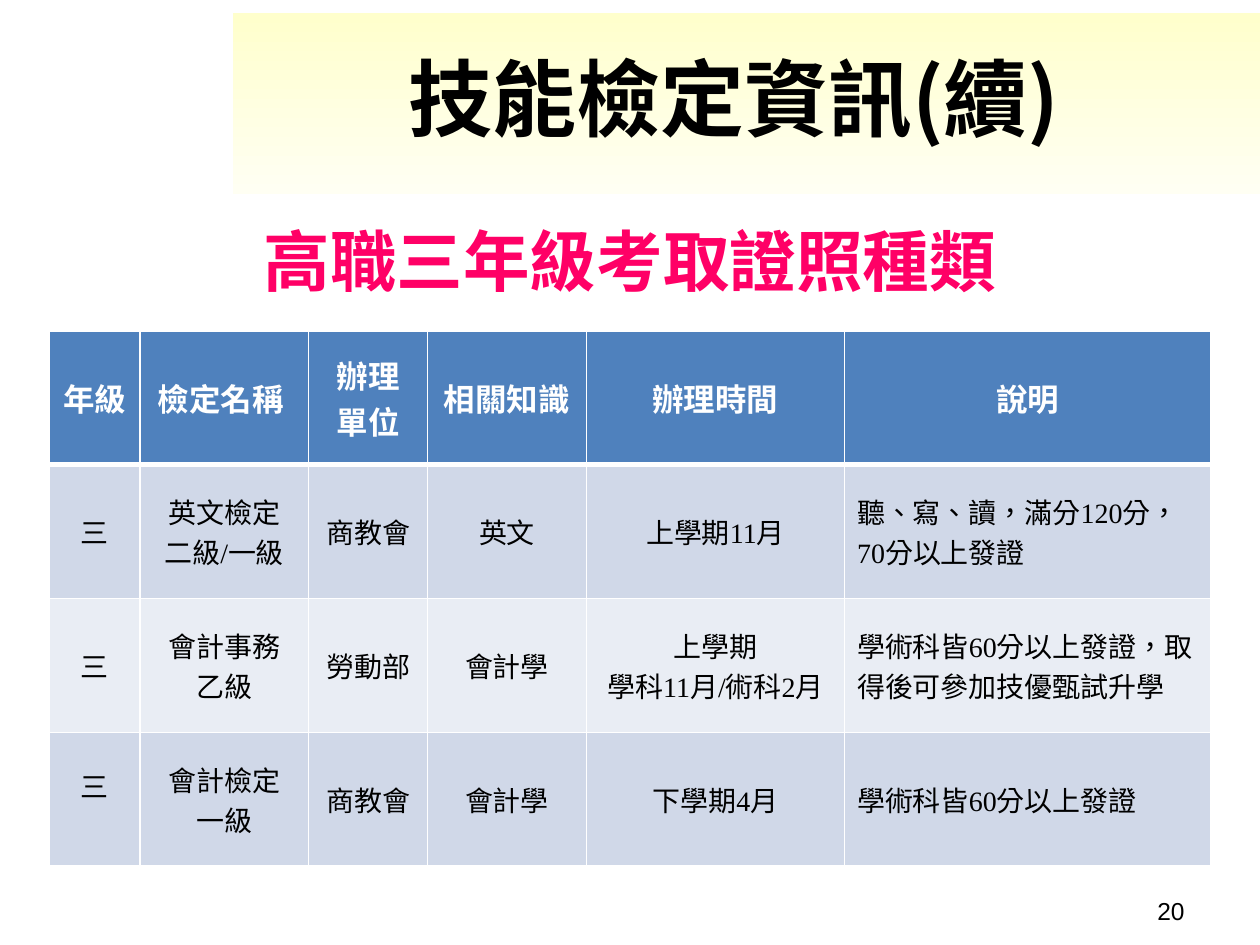
"""Build the slide listing third-year vocational certificates."""
from lxml import etree
from pptx import Presentation
from pptx import util as u
from pptx.dml.color import RGBColor
from pptx.enum import lang, shapes, text
from pptx.oxml.ns import qn

COLORS = {
    "black": "000000", "white": "FFFFFF", "pink": "FF0066",
    "band_top": "FFFFCC", "band_bottom": "FFFFF3",
    "header": "4F81BD", "odd": "D0D8E8", "even": "E9EDF4",
}
CJK = "Noto Sans CJK SC"
CENTER = text.PP_ALIGN.CENTER


def style(frame, size, color, latin=CJK, bold=False, align=CENTER):
    for paragraph in frame.paragraphs:
        paragraph.alignment = align
        for run in paragraph.runs:
            font = run.font
            font.size, font.bold, font.name = u.Pt(size), bold, latin
            font.color.rgb = RGBColor.from_string(COLORS[color])
            font.language_id = lang.MSO_LANGUAGE_ID.TRADITIONAL_CHINESE
            etree.SubElement(font._element, qn("a:ea"), typeface=CJK)


def add_borders(cell, top, bottom):
    properties = cell._tc.get_or_add_tcPr()
    for index, (side, width) in enumerate(
            [("L", 1), ("R", 1), ("T", top), ("B", bottom)]):
        border = etree.Element(qn("a:ln" + side), w=str(u.Pt(width)))
        fill = etree.SubElement(border, qn("a:solidFill"))
        etree.SubElement(fill, qn("a:srgbClr"), val=COLORS["white"])
        properties.insert(index, border)


deck = Presentation()
deck.slide_width, deck.slide_height = u.Pt(720), u.Pt(540)
slide = deck.slides.add_slide(deck.slide_layouts[5])

title = slide.shapes.title
title.left, title.top = u.Pt(133.2), u.Pt(27.4)
title.width, title.height = u.Pt(572.4), u.Pt(56)
title.text_frame.text = "技能檢定資訊(續)"
title.text_frame.auto_size = text.MSO_AUTO_SIZE.NONE
title.text_frame.vertical_anchor = text.MSO_ANCHOR.MIDDLE
style(title.text_frame, 48, "black", bold=True)

band = slide.shapes.add_shape(shapes.MSO_SHAPE.RECTANGLE, u.Pt(133.2), u.Pt(7.7),
                              u.Pt(586.8), u.Pt(103))
band.shadow.inherit = False
band.line.fill.background()
band.fill.gradient()
band.fill.gradient_angle = 270
for stop, name in zip(band.fill.gradient_stops, ["band_top", "band_bottom"]):
    stop.color.rgb = RGBColor.from_string(COLORS[name])
title.element.addprevious(band.element)

page_number = slide.shapes.add_textbox(u.Pt(516), u.Pt(508.3), u.Pt(168), u.Pt(28))
page_number.text_frame.word_wrap = True
page_number.text_frame.text = "20"
style(page_number.text_frame, 14, "black", "Arial", align=text.PP_ALIGN.RIGHT)

subtitle = slide.shapes.add_textbox(u.Pt(36.7), u.Pt(122.4), u.Pt(646.6), u.Pt(53.3))
subtitle.text_frame.word_wrap = True
subtitle.text_frame.text = "高職三年級考取證照種類"
style(subtitle.text_frame, 38, "pink", bold=True)

certificates = [
    ["年級", "檢定名稱 ", "辦理\n單位", "相關知識", "辦理時間", "說明"],
    ["三", "英文檢定\n二級/一級", "商教會", "英文", "上學期11月",
     "聽、寫、讀，滿分120分，70分以上發證"],
    ["三", "會計事務\n乙級", "勞動部", "會計學", "上學期\n學科11月/術科2月",
     "學術科皆60分以上發證，取得後可參加技優甄試升學"],
    ["三", "會計檢定\n一級", "商教會", "會計學", "下學期4月", "學術科皆60分以上發證"],
]
column_widths = [51.5, 96.5, 68, 90.7, 147.6, 209.3]
row_height = 76.5
table = slide.shapes.add_table(
    len(certificates), len(column_widths), u.Pt(28.4), u.Pt(189),
    u.Pt(sum(column_widths)), u.Pt(row_height * len(certificates))).table
for column, width in zip(table.columns, column_widths):
    column.width = u.Pt(width)

for r, entries in enumerate(certificates):
    table.rows[r].height = u.Pt(row_height)
    is_header = r == 0
    shade = "header" if is_header else ("odd" if r % 2 else "even")
    for c, entry in enumerate(entries):
        cell = table.cell(r, c)
        cell.text_frame.text = entry
        cell.vertical_anchor = text.MSO_ANCHOR.MIDDLE
        cell.fill.solid()
        cell.fill.fore_color.rgb = RGBColor.from_string(COLORS[shade])
        add_borders(cell, top=3 if r == 1 else 1, bottom=3 if is_header else 1)
        is_note = c == len(entries) - 1 and not is_header
        style(cell.text_frame, 18 if is_header else 16,
              "white" if is_header else "black", "Times New Roman", is_header,
              text.PP_ALIGN.LEFT if is_note else CENTER)
table.cell(3, 0).margin_bottom = u.Pt(20)

deck.save("out.pptx")
